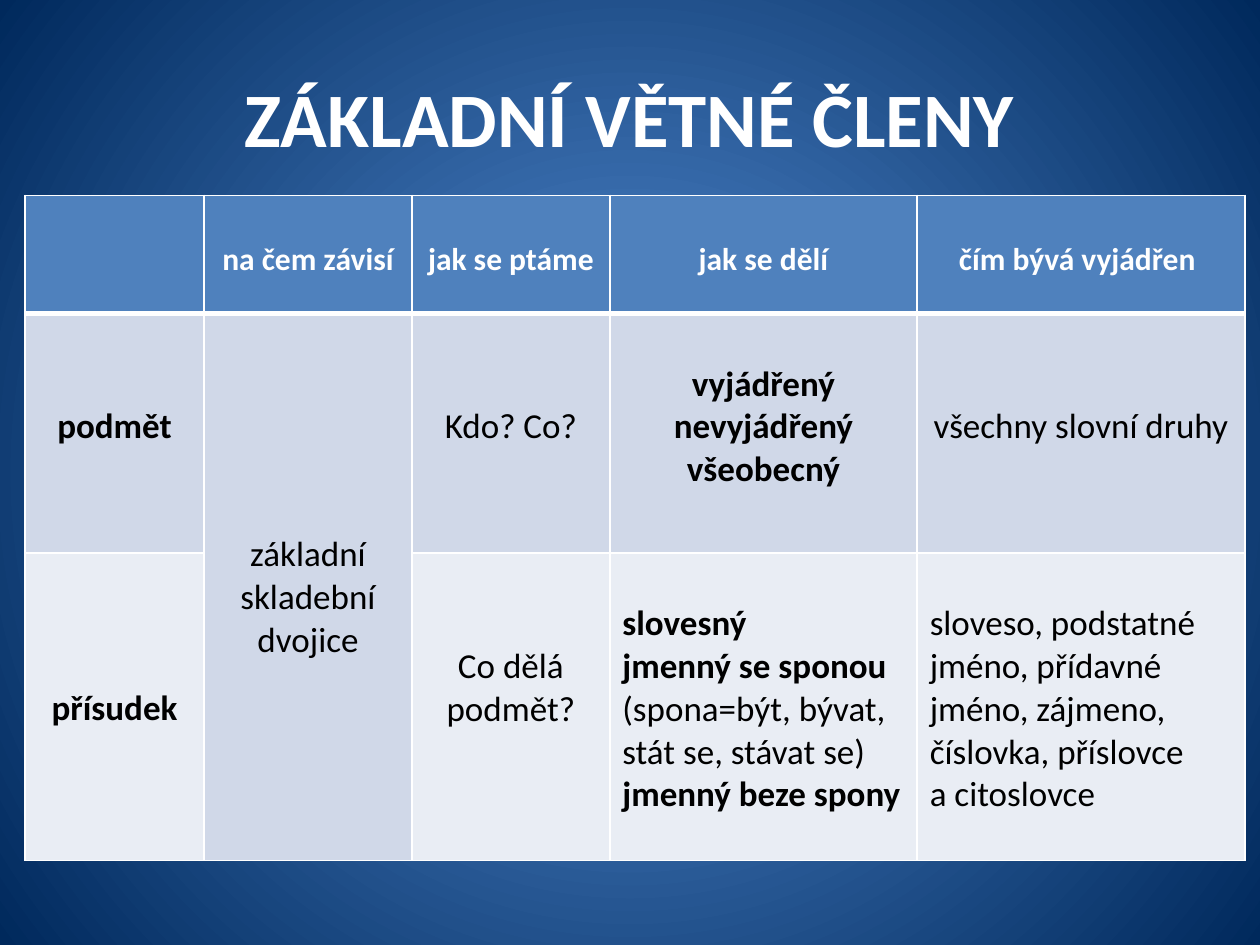
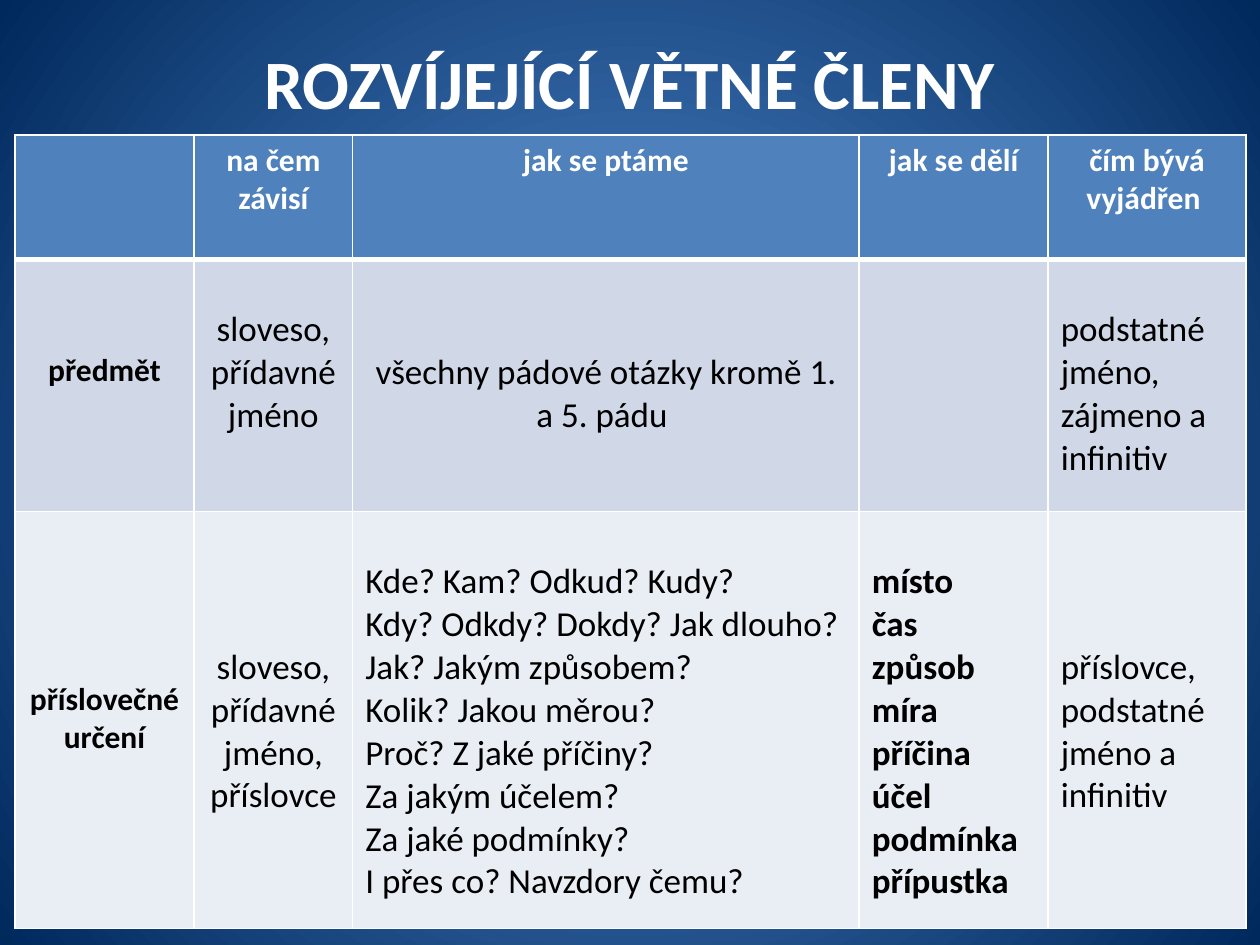
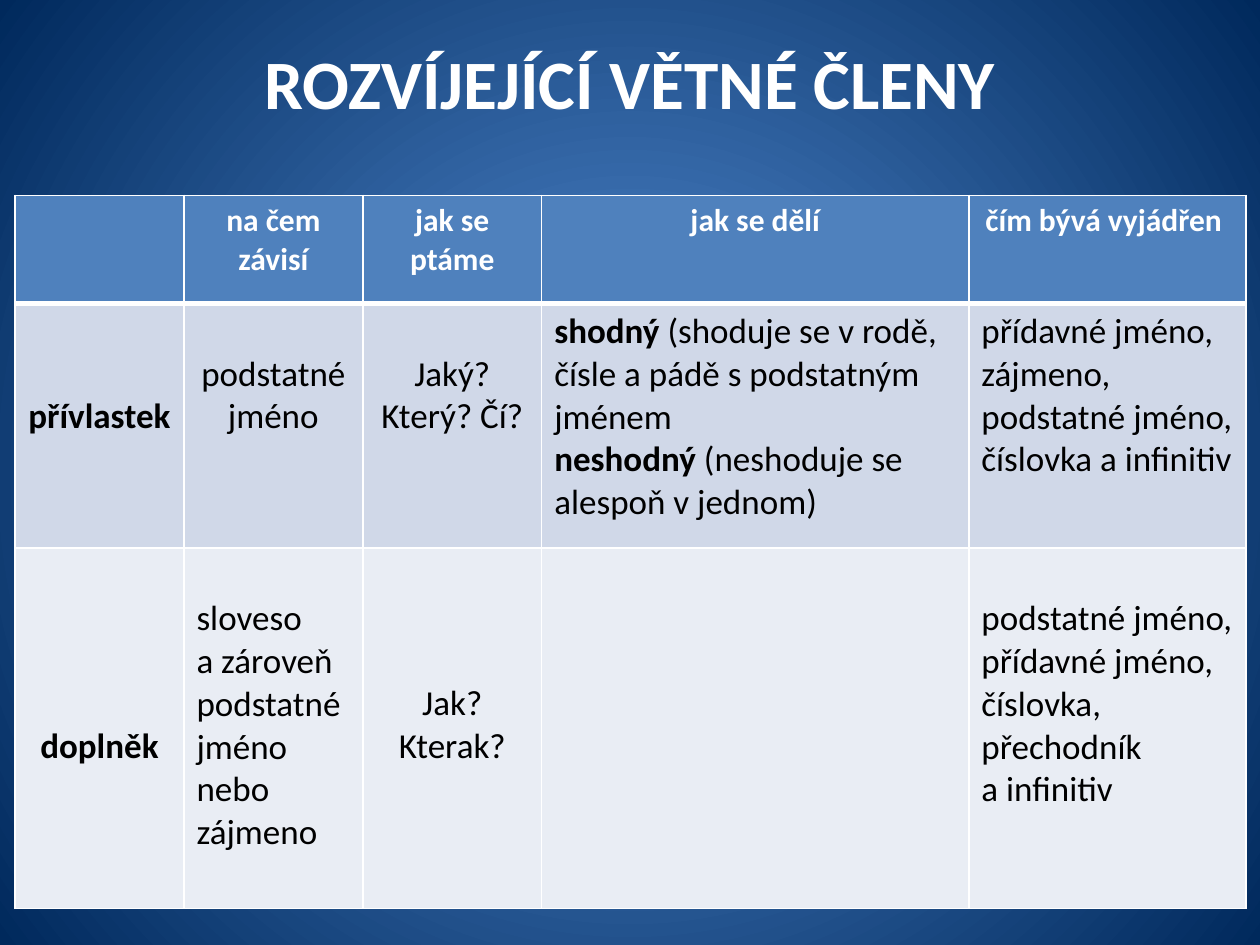
from dataclasses import dataclass
from typing import Any

from lxml.etree import SubElement
from pptx import Presentation
from pptx.dml.color import RGBColor
from pptx.enum.text import MSO_ANCHOR, PP_ALIGN
from pptx.oxml.ns import qn
from pptx.util import Inches, Length, Pt

SLIDE_WIDTH = Inches(10)
SLIDE_HEIGHT = Inches(7.5)
COLUMN = SLIDE_WIDTH / 100
ROW = SLIDE_HEIGHT / 75
BLANK_LAYOUT = 6

FONT = "Calibri"
WHITE = "FFFFFF"
BLACK = "000000"
HEADER_FILL = "4F81BD"
BODY_FILLS = ("D0D8E8", "E9EDF4")
BACKGROUND_STOPS = ("558ED5", "00295C")
HEADER_SIZE = 18
BODY_SIZE = 20
LINE_ROWS = 3.39
CELL_INSET_ROWS = 0.5
THIN_BORDER = 1
HEADER_BORDER = 3


@dataclass(frozen=True)
class Cell:
    paragraphs: tuple[str, ...] = ()
    lines_above: float = 0
    centered: bool = True
    size: float = BODY_SIZE
    rows_spanned: int = 1


@dataclass(frozen=True)
class Lesson:
    title: str
    title_rows: float
    title_size: float
    table_left: float
    table_top: float
    column_widths: tuple[float, ...]
    row_heights: tuple[float, ...]
    header_lines_above: float
    body: tuple[tuple[Cell, ...], ...]


HEADINGS = ("", "na čem závisí", "jak se ptáme", "jak se dělí", "čím bývá vyjádřen ")
DEVELOPING_TITLE = "ROZVÍJEJÍCÍ VĚTNÉ ČLENY"

LESSONS = (
    Lesson(
        "ZÁKLADNÍ VĚTNÉ ČLENY", 12.5, 44, 2, 15.5,
        (14.2, 16.5, 15.7, 24.4, 26), (9.4, 19, 24.4), 0.9,
        (
            (
                Cell(("*podmět*",), 2),
                Cell(("základní skladební dvojice",), 5, rows_spanned=2),
                Cell(("Kdo? Co?",), 2),
                Cell(("*vyjádřený*", "*nevyjádřený*", "*všeobecný*"), 1),
                Cell(("všechny slovní druhy",), 2),
            ),
            (
                Cell(("*přísudek*",), 3),
                Cell(),
                Cell(("Co dělá podmět?",), 2),
                Cell(
                    (
                        "*slovesný*",
                        "*jmenný se sponou *(spona=být, bývat, stát se, stávat se)",
                        "*jmenný beze spony*",
                    ),
                    1, False,
                ),
                Cell(
                    (
                        "sloveso, podstatné jméno, přídavné jméno, zájmeno, číslovka, příslovce",
                        "a citoslovce",
                    ),
                    1, False,
                ),
            ),
        ),
    ),
    Lesson(
        DEVELOPING_TITLE, 6.9, 39.6, 1.2, 10.7,
        (14.2, 12.6, 40.2, 15, 15.7), (9.9, 20, 33.1), 0,
        (
            (
                Cell(("*předmět*",), 2, size=HEADER_SIZE),
                Cell(("sloveso, přídavné jméno",), 1),
                Cell(("všechny pádové otázky kromě 1. a 5. pádu ",), 2),
                Cell(),
                Cell(("podstatné jméno, zájmeno a", "infinitiv"), 1, False),
            ),
            (
                Cell(("*příslovečné určení*",), 3.8, size=HEADER_SIZE),
                Cell(("sloveso, přídavné jméno, příslovce",), 3),
                Cell(
                    (
                        "Kde? Kam? Odkud? Kudy?",
                        "Kdy? Odkdy? Dokdy? Jak dlouho?",
                        "Jak? Jakým způsobem?",
                        "Kolik? Jakou měrou?",
                        "Proč? Z jaké příčiny?",
                        "Za jakým účelem?",
                        "Za jaké podmínky?",
                        "I přes co? Navzdory čemu?",
                    ),
                    1, False,
                ),
                Cell(
                    (
                        "*místo*", "*čas*", "*způsob*", "*míra*",
                        "*příčina*", "*účel*", "*podmínka*", "*přípustka*",
                    ),
                    1, False,
                ),
                Cell(("příslovce, podstatné jméno a", "infinitiv"), 3, False),
            ),
        ),
    ),
    Lesson(
        DEVELOPING_TITLE, 6.9, 39.6, 1.2, 15.5,
        (13.4, 14.2, 14.2, 33.9, 22), (8.6, 19.4, 28.6), 0,
        (
            (
                Cell(("*přívlastek*",), 2),
                Cell(("podstatné jméno",), 1),
                Cell(("Jaký? Který? Čí?",), 1),
                Cell(
                    (
                        "*shodný *(shoduje se v rodě, čísle a pádě s podstatným jménem",
                        "*neshodný *(neshoduje se alespoň v jednom)",
                    ),
                    0, False,
                ),
                Cell(
                    ("přídavné jméno, zájmeno, podstatné jméno, číslovka a infinitiv",),
                    0, False,
                ),
            ),
            (
                Cell(("*doplněk*",), 4),
                Cell(("sloveso", "a zároveň podstatné jméno nebo zájmeno"), 1, False),
                Cell(("Jak? Kterak?",), 3),
                Cell(),
                Cell(
                    ("podstatné jméno, přídavné jméno, číslovka, přechodník", "a infinitiv"),
                    1, False,
                ),
            ),
        ),
    ),
)


def color(value: str) -> RGBColor:
    return RGBColor.from_string(value)


def columns(count: float) -> Length:
    return Length(round(count * COLUMN))


def rows(count: float) -> Length:
    return Length(round(count * ROW))


def apply_format(target: Any, values: dict[str, Any]) -> None:
    for name, value in values.items():
        setattr(target, name, value)


def write_text(text_frame: Any, content: Cell, text_color: str) -> None:
    for index, text in enumerate(content.paragraphs):
        paragraph = text_frame.paragraphs[0] if index == 0 else text_frame.add_paragraph()
        paragraph.alignment = PP_ALIGN.CENTER if content.centered else PP_ALIGN.LEFT
        for position, part in enumerate(text.split("*")):
            if part:
                run = paragraph.add_run()
                run.text = part
                apply_format(
                    run.font,
                    {"name": FONT, "size": Pt(content.size), "bold": position % 2 == 1},
                )
                run.font.color.rgb = color(text_color)


def paint_background(slide: Any) -> None:
    fill = slide.background.fill
    fill.gradient()
    for stop, value in zip(fill.gradient_stops, BACKGROUND_STOPS):
        stop.color.rgb = color(value)
    gradient = next(slide.element.iter(qn("a:gradFill")))
    gradient.remove(gradient.find(qn("a:lin")))
    circle = SubElement(gradient, qn("a:path"), {"path": "circle"})
    SubElement(circle, qn("a:fillToRect"), dict.fromkeys("ltrb", "50000"))


def draw_title(slide: Any, lesson: Lesson) -> None:
    shape = slide.shapes.add_textbox(columns(5), rows(3), columns(90), rows(lesson.title_rows))
    apply_format(shape.text_frame, {"word_wrap": True, "vertical_anchor": MSO_ANCHOR.MIDDLE})
    write_text(shape.text_frame, Cell((f"*{lesson.title}*",), size=lesson.title_size), WHITE)


def draw_borders(table_cell: Any, row_index: int) -> None:
    widths = {
        "a:lnL": THIN_BORDER,
        "a:lnR": THIN_BORDER,
        "a:lnT": HEADER_BORDER if row_index == 1 else THIN_BORDER,
        "a:lnB": HEADER_BORDER if row_index == 0 else THIN_BORDER,
    }
    properties = table_cell._tc.get_or_add_tcPr()
    for position, (tag, width) in enumerate(widths.items()):
        line = SubElement(properties, qn(tag), {"w": str(Pt(width))})
        solid = SubElement(line, qn("a:solidFill"))
        SubElement(solid, qn("a:srgbClr"), {"val": WHITE})
        properties.insert(position, line)


def draw_table(slide: Any, lesson: Lesson) -> None:
    header = tuple(
        Cell((f"*{heading}*",) if heading else (), lesson.header_lines_above, size=HEADER_SIZE)
        for heading in HEADINGS
    )
    contents = (header, *lesson.body)
    table = slide.shapes.add_table(
        len(contents), len(HEADINGS),
        columns(lesson.table_left), rows(lesson.table_top),
        columns(sum(lesson.column_widths)), rows(sum(lesson.row_heights)),
    ).table
    apply_format(table, {"first_row": False, "horz_banding": False})
    for table_column, width in zip(table.columns, lesson.column_widths):
        table_column.width = columns(width)
    for table_row, height in zip(table.rows, lesson.row_heights):
        table_row.height = rows(height)
    fills = (HEADER_FILL, *BODY_FILLS)
    for row_index, row_contents in enumerate(contents):
        for column_index, content in enumerate(row_contents):
            table_cell = table.cell(row_index, column_index)
            table_cell.fill.solid()
            table_cell.fill.fore_color.rgb = color(fills[row_index])
            draw_borders(table_cell, row_index)
            apply_format(
                table_cell,
                {
                    "margin_left": columns(1),
                    "margin_right": columns(1),
                    "margin_top": rows(CELL_INSET_ROWS + content.lines_above * LINE_ROWS),
                    "margin_bottom": rows(CELL_INSET_ROWS),
                    "vertical_anchor": MSO_ANCHOR.TOP,
                },
            )
            write_text(table_cell.text_frame, content, WHITE if row_index == 0 else BLACK)
            if content.rows_spanned > 1:
                last_row = row_index + content.rows_spanned - 1
                table_cell.merge(table.cell(last_row, column_index))


def main() -> None:
    presentation = Presentation()
    apply_format(presentation, {"slide_width": SLIDE_WIDTH, "slide_height": SLIDE_HEIGHT})
    for lesson in LESSONS:
        slide = presentation.slides.add_slide(presentation.slide_layouts[BLANK_LAYOUT])
        paint_background(slide)
        draw_title(slide, lesson)
        draw_table(slide, lesson)
    presentation.save("out.pptx")


if __name__ == "__main__":
    main()
